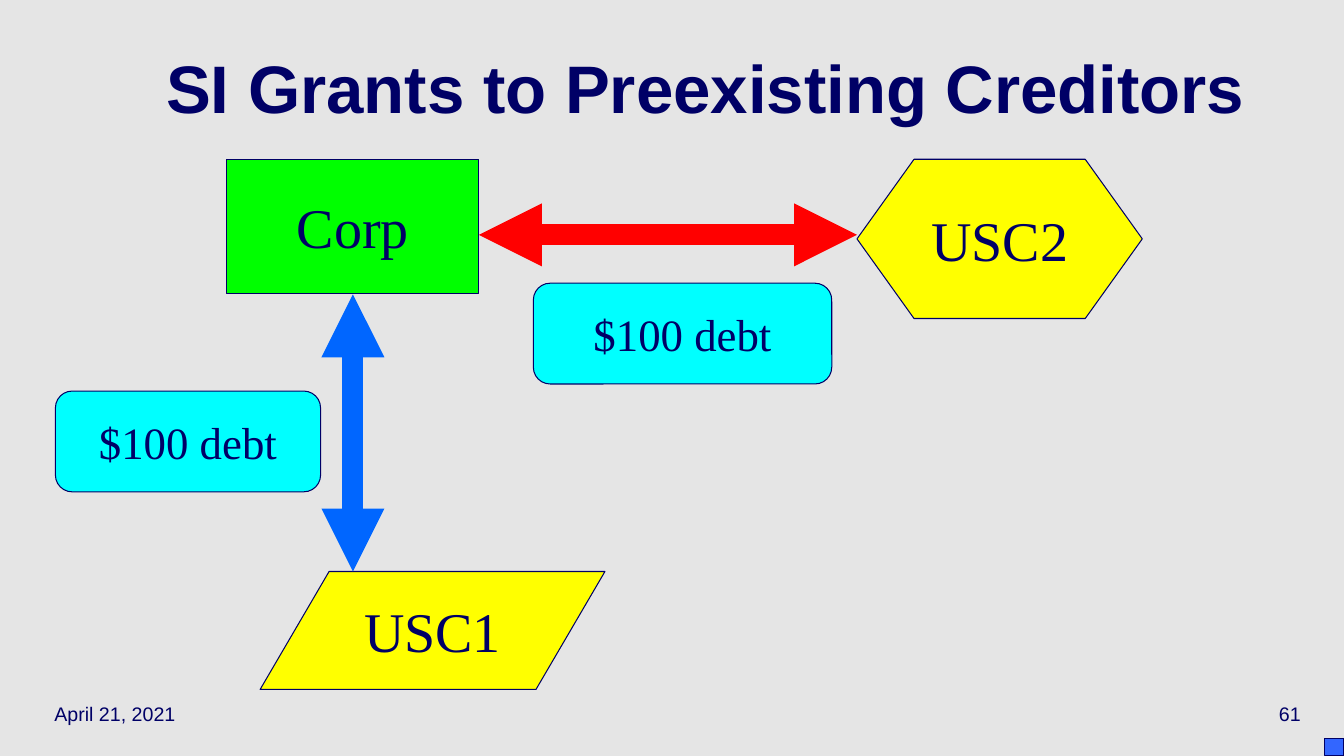
import dataclasses

import lxml.etree
import pptx
import pptx.dml.color
import pptx.enum.shapes
import pptx.enum.text
import pptx.oxml.ns
import pptx.util

Inches = pptx.util.Inches
Kind = pptx.enum.shapes.MSO_SHAPE
Align = pptx.enum.text.PP_ALIGN

COLORS = {
    "background": "E5E5E5",
    "navy": "000066",
    "yellow": "FFFF00",
    "green": "00FF00",
    "cyan": "00FFFF",
    "red": "FF0000",
    "blue": "0066FF",
    "corner": "3366FF",
}


@dataclasses.dataclass
class Label:
    text: str
    area: tuple[float, float, float, float]
    size: int
    align: Align
    bold: bool = False
    spacing: float = 1.0


@dataclasses.dataclass
class Node:
    kind: Kind
    area: tuple[float, float, float, float]
    fill: str
    text: str = ""
    size: int = 40


@dataclasses.dataclass
class Arrow:
    start: tuple[float, float]
    end: tuple[float, float]
    color: str


LABELS = [
    Label("April 21, 2021", (0.44, 6.83, 2.78, 0.5), 14, Align.LEFT),
    Label("61", (10.22, 6.83, 2.78, 0.5), 14, Align.RIGHT),
    Label("SI Grants to Preexisting Creditors", (0.89, 0.33, 12.22, 1.25), 48,
          Align.CENTER, bold=True, spacing=0.7),
]
PARTIES = [
    Node(Kind.FLOWCHART_DATA, (2.58, 5.67, 3.42, 1.17), "yellow", "USC1"),
    Node(Kind.FLOWCHART_PROCESS, (2.25, 1.58, 2.5, 1.33), "green", "Corp"),
    Node(Kind.FLOWCHART_PREPARATION, (8.5, 1.58, 2.83, 1.58), "yellow", "USC2"),
]
ARROWS = [
    Arrow((4.75, 2.33), (8.5, 2.33), "red"),
    Arrow((3.5, 2.92), (3.5, 5.67), "blue"),
]
DEBTS = [
    Node(Kind.FLOWCHART_ALTERNATE_PROCESS, area, "cyan", "$100 debt", 32)
    for area in ((0.55, 3.88, 2.63, 1), (5.29, 2.81, 2.96, 1))
]
CORNER = Node(Kind.RECTANGLE, (13.14, 7.33, 0.19, 0.17), "corner")


def rgb(name: str) -> pptx.dml.color.RGBColor:
    return pptx.dml.color.RGBColor.from_string(COLORS[name])


def write_text(frame, text: str, size: int, font: str, align: Align,
               bold: bool = False, spacing: float = 1.0) -> None:
    frame.vertical_anchor = pptx.enum.text.MSO_ANCHOR.MIDDLE
    para = frame.paragraphs[0]
    para.alignment = align
    para.line_spacing = spacing
    span = para.add_run()
    span.text = text
    font_format = {"name": font, "size": pptx.util.Pt(size), "bold": bold}
    for attribute, value in font_format.items():
        setattr(span.font, attribute, value)
    span.font.color.rgb = rgb("navy")


def draw_label(page, label: Label) -> None:
    box = page.shapes.add_textbox(*map(Inches, label.area))
    box.text_frame.word_wrap = True
    write_text(box.text_frame, label.text, label.size, "Arial", label.align,
               label.bold, label.spacing)


def draw_node(page, node: Node) -> None:
    shape = page.shapes.add_shape(node.kind, *map(Inches, node.area))
    shape.shadow.inherit = False
    shape.fill.solid()
    shape.fill.fore_color.rgb = rgb(node.fill)
    shape.line.color.rgb = rgb("navy")
    shape.line.width = pptx.util.Pt(0.75)
    if node.text:
        shape.text_frame.word_wrap = False
        write_text(shape.text_frame, node.text, node.size, "Times New Roman",
                   Align.CENTER)


def draw_arrow(page, arrow: Arrow) -> None:
    connector = page.shapes.add_connector(
        pptx.enum.shapes.MSO_CONNECTOR.STRAIGHT,
        *map(Inches, arrow.start + arrow.end))
    connector.line.color.rgb = rgb(arrow.color)
    connector.line.width = pptx.util.Pt(15)
    qn = pptx.oxml.ns.qn
    properties = connector.element.spPr
    outline = properties.find(qn("a:ln"))
    for tag in ("a:headEnd", "a:tailEnd"):
        lxml.etree.SubElement(outline, qn(tag), type="triangle")
    lxml.etree.SubElement(properties, qn("a:effectLst"))


def main() -> None:
    deck = pptx.Presentation()
    deck.slide_width = Inches(13.33)
    deck.slide_height = Inches(7.5)
    page = deck.slides.add_slide(deck.slide_layouts[6])
    page.background.fill.solid()
    page.background.fill.fore_color.rgb = rgb("background")

    # Title, date and page number
    for label in LABELS:
        draw_label(page, label)

    # Parties, the links between them, and the debts on those links
    for party in PARTIES:
        draw_node(page, party)
    for arrow in ARROWS:
        draw_arrow(page, arrow)
    for node in (CORNER, *DEBTS):
        draw_node(page, node)

    deck.save("out.pptx")


if __name__ == "__main__":
    main()
